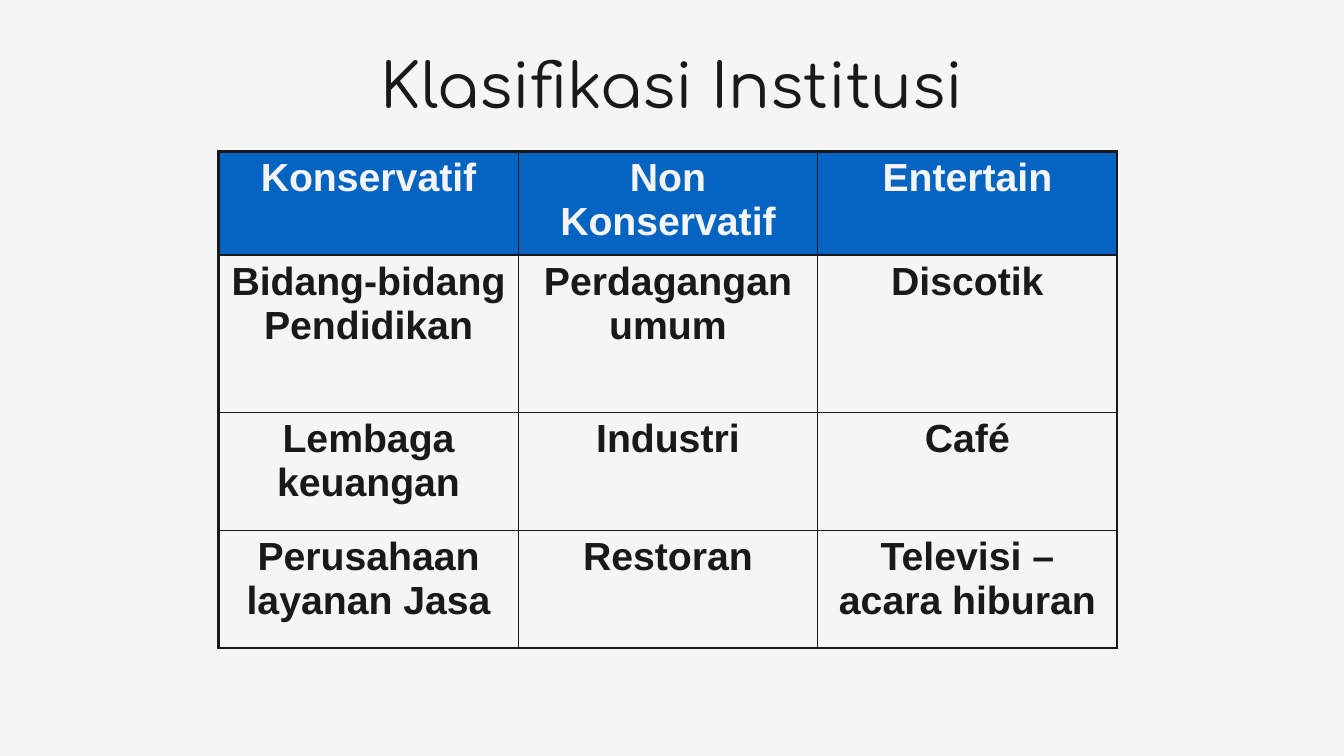
from lxml.etree import SubElement
from pptx import Presentation
from pptx.dml.color import RGBColor
from pptx.enum.text import MSO_ANCHOR as Anchor, PP_ALIGN as Align
from pptx.oxml.ns import qn
from pptx.util import Inches, Pt

INK, PAPER, BLUE = "191919", "F5F5F5", "0563C1"
THIN, THICK = 1, 2.25


def color(value):
    return RGBColor.from_string(value)


def set_values(target, values):
    for name, value in values.items():
        setattr(target, name, value)


class SlideBuilder:
    title_font = {"name": "Comfortaa", "size": Pt(44), "bold": False}
    cell_font = {"name": "Arial", "size": Pt(28), "bold": True}
    cell_margins = {"margin_left": Inches(0.1), "margin_right": Inches(0.1),
                    "margin_top": Inches(0.05), "margin_bottom": Inches(0.05)}

    def __init__(self, presentation):
        self.slide = presentation.slides.add_slide(presentation.slide_layouts[5])
        background = self.slide.background.fill
        background.solid()
        background.fore_color.rgb = color(PAPER)

    def add_text(self, frame, text, font, ink, **paragraph_format):
        paragraph = frame.paragraphs[0]
        set_values(paragraph, {"alignment": Align.CENTER, **paragraph_format})
        run = paragraph.add_run()
        run.text = text
        set_values(run.font, font)
        run.font.color.rgb = color(ink)

    def title(self, text, left, top, width, height):
        shape = self.slide.shapes.title
        set_values(shape, {"left": Inches(left), "top": Inches(top),
                           "width": Inches(width), "height": Inches(height)})
        set_values(shape.text_frame, {"vertical_anchor": Anchor.MIDDLE,
                                      "word_wrap": True})
        self.add_text(shape.text_frame, text, self.title_font, INK, line_spacing=0.9)

    def border(self, cell, widths):
        properties = cell._tc.get_or_add_tcPr()
        # Border lines must come before the fill
        for position, (side, width) in enumerate(widths.items()):
            line = SubElement(properties, qn(f"a:ln{side}"), w=str(Pt(width)))
            fill = SubElement(line, qn("a:solidFill"))
            SubElement(fill, qn("a:srgbClr"), val=INK)
            properties.insert(position, line)

    def table(self, rows, left, top, column_width, row_heights):
        row_count, column_count = len(rows), len(rows[0])
        table = self.slide.shapes.add_table(
            row_count, column_count, Inches(left), Inches(top),
            Inches(column_width * column_count), Inches(sum(row_heights))).table
        set_values(table, {"first_row": False, "horz_banding": False})
        for column in table.columns:
            column.width = Inches(column_width)
        for row, height in zip(table.rows, row_heights):
            row.height = Inches(height)
        for i, texts in enumerate(rows):
            for j, text in enumerate(texts):
                cell = table.cell(i, j)
                set_values(cell, self.cell_margins)
                if i == 0:
                    cell.fill.solid()
                    cell.fill.fore_color.rgb = color(BLUE)
                else:
                    cell.fill.background()
                self.add_text(cell.text_frame, text, self.cell_font,
                              PAPER if i == 0 else INK)
                # Thick outer frame, thin inner grid
                outer = {"L": j == 0, "R": j == column_count - 1,
                         "T": i == 0, "B": i == row_count - 1}
                self.border(cell, {side: THICK if edge else THIN
                                   for side, edge in outer.items()})


def main():
    presentation = Presentation()
    set_values(presentation, {"slide_width": Inches(13.33),
                              "slide_height": Inches(7.5)})
    builder = SlideBuilder(presentation)

    # Title
    builder.title("Klasifikasi Institusi", 2.42, 0.25, 8.5, 1.25)

    # Institution classes
    builder.table([
        ["Konservatif", "Non Konservatif", "Entertain"],
        ["Bidang-bidang Pendidikan", "Perdagangan umum", "Discotik"],
        ["Lembaga keuangan", "Industri", "Café"],
        ["Perusahaan layanan Jasa", "Restoran", "Televisi – acara hiburan"],
    ], 2.17, 1.5, 2.97, [1.03, 1.56, 1.17, 1.17])

    presentation.save("out.pptx")


if __name__ == "__main__":
    main()
